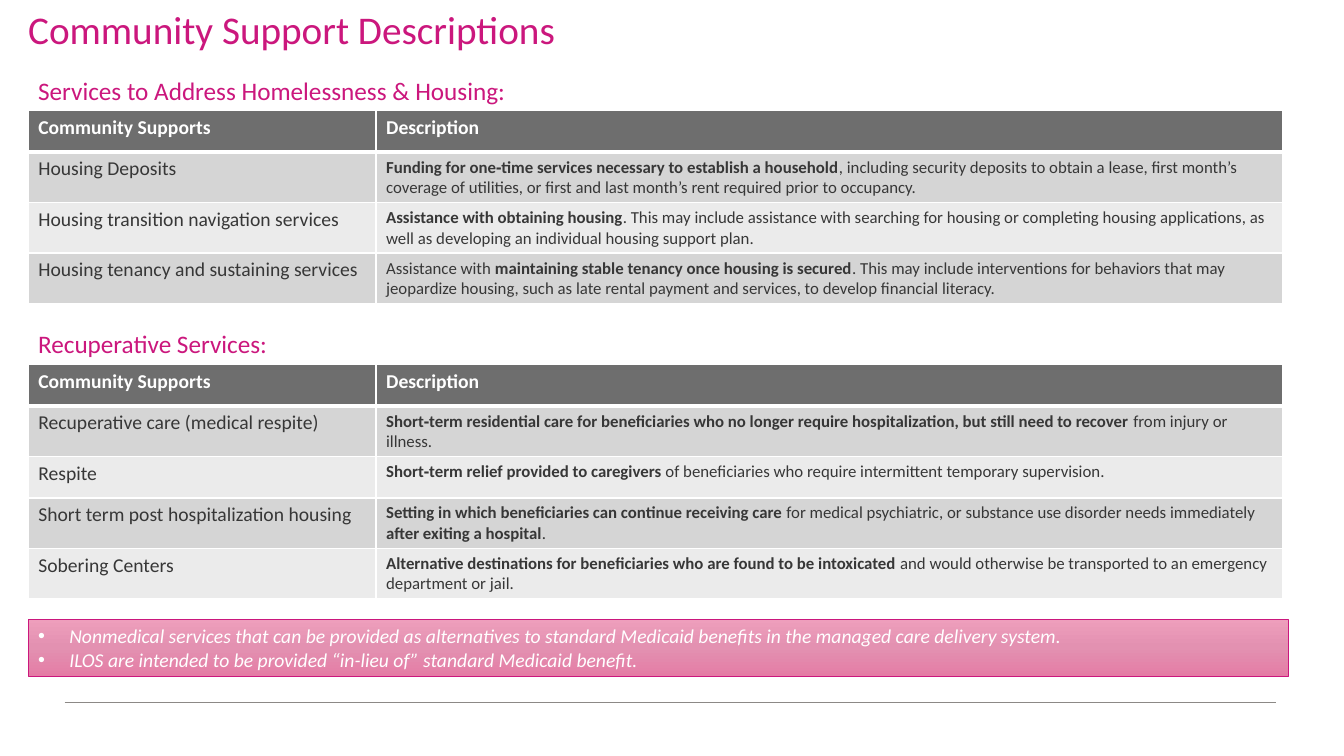
from copy import deepcopy

from pptx import Presentation
from pptx.dml.color import RGBColor
from pptx.enum.shapes import MSO_CONNECTOR, MSO_SHAPE
from pptx.enum.text import MSO_ANCHOR, MSO_AUTO_SIZE, PP_ALIGN
from pptx.oxml import parse_xml
from pptx.oxml.ns import nsdecls, qn
from pptx.oxml.xmlchemy import OxmlElement
from pptx.util import Inches, Pt

COLORS = {
    "pink": "CB177D", "white": "FFFFFF", "text": "373737", "header": "6E6E6E",
    "band_dark": "D5D5D5", "band_light": "EBEBEB", "rule": "8C8986",
    "note_top": "EE9EBC", "note_middle": "E391B1", "note_bottom": "E47CA5",
}
LEFT = 0.28
COLUMN_WIDTHS = [3.45, 8.99]
ROW_HEIGHT = 0.41

SECTIONS = [
    {
        "heading": "Services to Address Homelessness & Housing:",
        "heading_top": 0.7, "heading_width": 4.89, "table_top": 1.1,
        # Text between ** marks is bold
        "services": [
            ("Housing Deposits",
             "**Funding for one‑time services necessary to establish a household**, including security "
             "deposits to obtain a lease, first month’s coverage of utilities, or first and last month’s "
             "rent required prior to occupancy."),
            ("Housing transition navigation services",
             "**Assistance with obtaining housing**. This may include assistance with searching for "
             "housing or completing housing applications, as well as developing an individual housing "
             "support plan."),
            ("Housing tenancy and sustaining services",
             "Assistance with **maintaining stable tenancy once housing is secured**. This may include "
             "interventions for behaviors that may jeopardize housing, such as late rental payment and "
             "services, to develop financial literacy."),
        ],
    },
    {
        "heading": "Recuperative Services:",
        "heading_top": 3.21, "heading_width": 2.5, "table_top": 3.62,
        "services": [
            ("Recuperative care (medical respite)",
             "**Short‑term residential care for beneficiaries who no longer require hospitalization, "
             "but still need to recover **from injury or illness."),
            ("Respite",
             "**Short‑term relief provided to caregivers** of beneficiaries who require intermittent "
             "temporary supervision."),
            ("Short term post hospitalization housing",
             "**Setting in which beneficiaries can continue receiving care **for medical psychiatric, "
             "or substance use disorder needs immediately **after exiting a hospital**."),
            ("Sobering Centers",
             "**Alternative destinations for beneficiaries who are found to be intoxicated** and would "
             "otherwise be transported to an emergency department or jail."),
        ],
    },
]
NOTES = [
    "Nonmedical services that can be provided as alternatives to standard Medicaid benefits "
    "in the managed care delivery system.",
    "ILOS are intended to be provided “in-lieu of” standard Medicaid benefit.",
]


def write(paragraph, text, size, color, bold=False, italic=False):
    """Add text to a paragraph, switching bold at each ** mark."""
    for index, part in enumerate(text.split("**")):
        if part:
            run = paragraph.add_run()
            run.text = part
            font_format = {"name": "Calibri", "size": Pt(size), "italic": italic,
                           "bold": bold or index % 2 == 1}
            for attribute, value in font_format.items():
                setattr(run.font, attribute, value)
            run.font.color.rgb = RGBColor.from_string(COLORS[color])


def style_cell(cell, fill, top_width, bottom_width):
    """Give a cell white borders of the given widths and a solid fill."""
    properties = cell._tc.get_or_add_tcPr()
    for side, width in {"L": 1, "R": 1, "T": top_width, "B": bottom_width}.items():
        properties.append(parse_xml(
            f'<a:ln{side} {nsdecls("a")} w="{Pt(width)}"><a:solidFill>'
            f'<a:srgbClr val="{COLORS["white"]}"/></a:solidFill></a:ln{side}>'))
    cell.fill.solid()
    cell.fill.fore_color.rgb = RGBColor.from_string(COLORS[fill])


prs = Presentation()
prs.slide_width, prs.slide_height = Inches(13.33), Inches(7.5)
slide = prs.slides.add_slide(prs.slide_layouts[6])

# Footer rule
footer_rule = slide.shapes.add_connector(
    MSO_CONNECTOR.STRAIGHT, Inches(0.64), Inches(6.97), Inches(12.66), Inches(6.97))
footer_rule.line.color.rgb = RGBColor.from_string(COLORS["rule"])
footer_rule.line.width = Pt(0.5)
footer_rule._element.spPr.append(OxmlElement("a:effectLst"))

# Title
title = slide.shapes.add_textbox(Inches(LEFT), Inches(0.11), Inches(9), Inches(1.03)).text_frame
title_format = {"word_wrap": True, "vertical_anchor": MSO_ANCHOR.TOP, "margin_left": 0,
                "margin_top": 0, "margin_right": 0, "margin_bottom": 0}
for attribute, value in title_format.items():
    setattr(title, attribute, value)
title.paragraphs[0].line_spacing = 0.9
write(title.paragraphs[0], "Community Support Descriptions", 28, "pink")

# Note band
note = slide.shapes.add_shape(
    MSO_SHAPE.RECTANGLE, Inches(LEFT), Inches(6.14), Inches(12.5), Inches(0.57))
note.shadow.inherit = False
note.line.color.rgb = RGBColor.from_string(COLORS["pink"])
note.line.width = Pt(0.5)
note.fill.gradient()
note.fill.gradient_angle = 270
stop_list = note._element.spPr.find(qn("a:gradFill")).find(qn("a:gsLst"))
stop_list.append(deepcopy(stop_list[0]))
for stop, position, color in zip(note.fill.gradient_stops, (0, 0.5, 1),
                                 ("note_top", "note_middle", "note_bottom")):
    stop.position = position
    stop.color.rgb = RGBColor.from_string(COLORS[color])
note_text = note.text_frame
note_text.word_wrap = True
note_text.auto_size = MSO_AUTO_SIZE.SHAPE_TO_FIT_TEXT
for index, line in enumerate(NOTES):
    paragraph = note_text.add_paragraph() if index else note_text.paragraphs[0]
    paragraph.alignment = PP_ALIGN.LEFT
    indent = paragraph._p.get_or_add_pPr()
    indent.set("marL", str(Inches(0.31)))
    indent.set("indent", str(-Inches(0.31)))
    indent.append(parse_xml(f'<a:buFont {nsdecls("a")} typeface="Arial"/>'))
    indent.append(parse_xml(f'<a:buChar {nsdecls("a")} char="•"/>'))
    write(paragraph, line, 14, "white", italic=True)

# Service sections
for section in SECTIONS:
    heading = slide.shapes.add_textbox(
        Inches(LEFT), Inches(section["heading_top"]),
        Inches(section["heading_width"]), Inches(0.4)).text_frame
    heading.word_wrap = False
    heading.auto_size = MSO_AUTO_SIZE.SHAPE_TO_FIT_TEXT
    write(heading.paragraphs[0], section["heading"], 18, "pink")

    rows = [("Community Supports", "Description")] + section["services"]
    table = slide.shapes.add_table(
        len(rows), 2, Inches(LEFT), Inches(section["table_top"]),
        Inches(sum(COLUMN_WIDTHS)), Inches(ROW_HEIGHT * len(rows))).table
    for column, width in zip(table.columns, COLUMN_WIDTHS):
        column.width = Inches(width)
    for row_index, row in enumerate(rows):
        table.rows[row_index].height = Inches(ROW_HEIGHT)
        is_header = row_index == 0
        band = "header" if is_header else "band_dark" if row_index % 2 else "band_light"
        for column_index, text in enumerate(row):
            cell = table.cell(row_index, column_index)
            style_cell(cell, band, 3 if row_index == 1 else 1, 3 if is_header else 1)
            size = 14 if is_header or column_index == 0 else 12
            write(cell.text_frame.paragraphs[0], text, size,
                  "white" if is_header else "text", bold=is_header)

prs.save("out.pptx")
